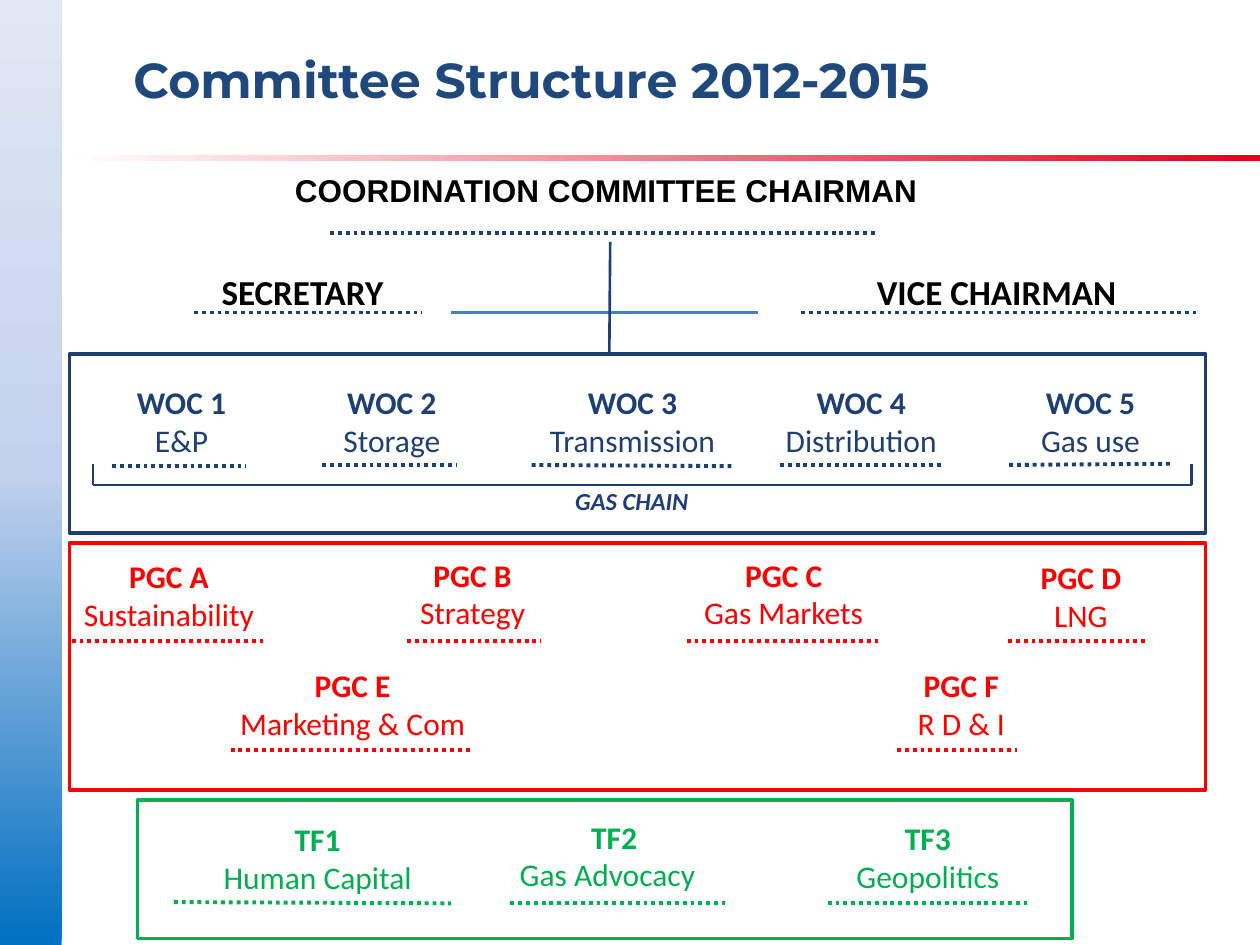
from copy import deepcopy

from pptx import Presentation
from pptx.dml.color import RGBColor
from pptx.enum.dml import MSO_LINE
from pptx.enum.shapes import MSO_CONNECTOR, MSO_SHAPE
from pptx.enum.text import MSO_ANCHOR, MSO_AUTO_SIZE, PP_ALIGN
from pptx.oxml.ns import qn
from pptx.util import Pt
from lxml import etree

DOTS = MSO_LINE.ROUND_DOT
STRAIGHT = MSO_CONNECTOR.STRAIGHT
RECT = MSO_SHAPE.RECTANGLE
MIDDLE, TOP = MSO_ANCHOR.MIDDLE, MSO_ANCHOR.TOP
GROW = MSO_AUTO_SIZE.SHAPE_TO_FIT_TEXT
CENTER, LEFT = PP_ALIGN.CENTER, PP_ALIGN.LEFT

NAVY, RED, GREEN, BLACK = "1E3F73", "FF0000", "00B050", "000000"
TITLE, BLUE = "1F497D", "4B7EBC"

# head, name, text left, top, width, dots from x, to x, from y, to y
WOCS = [
    ("WOC 1", "E&P", 61.2, 215.3, 85, 64.1, 140.4, 266.4, 266.4),
    ("WOC 2", "Storage", 181.4, 215.3, 85, 184.3, 260.6, 265.7, 265.7),
    ("WOC 3", "Transmission", 298.8, 215.3, 125.3, 303.8, 418.3, 265.7, 266.4),
    ("WOC 4", "Distribution", 434.9, 215.3, 114.5, 445.7, 538.6, 265.7, 265.7),
    ("WOC 5", "Gas use", 565.9, 215.3, 114.5, 576.7, 669.6, 265.7, 265),
]
PGCS = [
    ("PGC A", "Sustainability", 31, 314.6, 131, 41, 150.5, 366.5, 366.5),
    ("PGC B", "Strategy", 221.8, 313.9, 96.5, 232.6, 308.9, 366.5, 366.5),
    ("PGC C", "Gas Markets", 382.3, 313.9, 131, 392.4, 501.8, 366.5, 366.5),
    ("PGC D", "LNG", 552.2, 315.4, 131, 576, 655.2, 366.5, 366.5),
    ("PGC E", "Marketing & Com", 123.8, 377.3, 155.5, 131.8, 268.6, 428.4, 428.4),
    ("PGC F", "R D & I", 483.8, 377.3, 131, 512.6, 581, 428.4, 428.4),
]
FORCES = [
    ("TF1", "Human Capital", 99.4, 465.1, 164.2, 99.4, 257.8, 515.5, 516.2),
    ("TF2", "Gas Advocacy\t", 285.8, 463.7, 130.3, 291.6, 414, 516.2, 516.2),
    ("TF3", "Geopolitics", 462.2, 464.4, 136.1, 473, 586.8, 516.2, 516.2),
]


def color(code):
    return RGBColor.from_string(code)


def add_text(slide, box, lines, hue, size, face="Calibri", align=CENTER,
             anchor=TOP, grow=True):
    """Add a text box; each line is a text and a dict of font values."""
    frame = slide.shapes.add_textbox(*map(Pt, box)).text_frame
    frame.word_wrap = True
    frame.vertical_anchor = anchor
    if grow:
        frame.auto_size = GROW
    for i, (text, style) in enumerate(lines):
        para = frame.add_paragraph() if i else frame.paragraphs[0]
        para.alignment = align
        run = para.add_run()
        run.text = text
        run.font.color.rgb = color(hue)
        for key, value in {"name": face, "size": Pt(size), **style}.items():
            setattr(run.font, key, value)


def add_line(slide, ends, hue, width=1.5, dash=None):
    line = slide.shapes.add_connector(STRAIGHT, *map(Pt, ends))
    line.line.color.rgb = color(hue)
    line.line.width = Pt(width)
    if dash:
        line.line.dash_style = dash
    etree.SubElement(line._element.spPr, qn("a:effectLst"))


def add_dots(slide, ends, hue):
    add_line(slide, ends, hue, 2.25, DOTS)


def add_frame(slide, box, hue):
    shape = slide.shapes.add_shape(RECT, *map(Pt, box))
    shape.shadow.inherit = False
    shape.fill.background()
    shape.line.color.rgb = color(hue)
    shape.line.width = Pt(2)


def add_fade(slide, box, hues, angle):
    """Add a bar with evenly spaced gradient stops."""
    shape = slide.shapes.add_shape(RECT, *map(Pt, box))
    shape.shadow.inherit = False
    shape.line.fill.background()
    shape.fill.gradient()
    shape.fill.gradient_angle = angle
    stops = shape._element.spPr.find(".//" + qn("a:gsLst"))
    while len(stops) < len(hues):
        stops.append(deepcopy(stops[0]))
    for i, (stop, hue) in enumerate(zip(shape.fill.gradient_stops, hues)):
        stop.color.rgb = color(hue)
        stop.position = i / (len(hues) - 1)


def add_units(slide, units, hue):
    for head, name, left, top, width, x1, x2, y1, y2 in units:
        lines = [(head, {"bold": True}), (name, {"bold": False})]
        add_text(slide, (left, top, width, 51), lines, hue, 18)
        add_dots(slide, (x1, y1, x2, y2), hue)


def add_chairs(slide):
    bold = {"bold": True}
    add_text(slide, (157.7, 94.3, 382.3, 28.8),
             [("COORDINATION COMMITTEE CHAIRMAN ", bold)], BLACK, 18, "Arial")
    for text, left in (("VICE CHAIRMAN", 388.1), ("SECRETARY", -8.6)):
        add_text(slide, (left, 151.2, 362.9, 31.7), [(text, bold)], BLACK, 20)
    for x1, x2, y in ((188.6, 501.8, 133.2), (110.9, 241.2, 178.6),
                      (457.9, 683.3, 178.6)):
        add_dots(slide, (x1, y, x2, y), NAVY)
    add_line(slide, (433.4, 178.6, 257.8, 178.6), BLUE)
    add_line(slide, (348.7, 138.2, 348.2, 202.3), NAVY)


def add_chain(slide):
    add_text(slide, (186.5, 274.3, 349.2, 24.5),
             [("GAS CHAIN", {"bold": True, "italic": True})], NAVY, 14)
    left, right, top, base = 53.1, 681, 265, 277.2
    for ends in ((right, base, left, base), (right, top, right, base),
                 (left, top, left, base)):
        add_line(slide, ends, NAVY)


def main():
    deck = Presentation()
    deck.slide_width, deck.slide_height = Pt(720), Pt(540)
    slide = deck.slides.add_slide(deck.slide_layouts[6])

    add_fade(slide, (-2.9, 0, 38.2, 540), ("0070C0", "C2D1ED", "E1E8F5"), 90)
    add_fade(slide, (42.5, 88.6, 677.5, 3.6), ("E3001B", "FFFFFF"), 180)
    add_text(slide, (69.1, 0, 527, 90),
             [("Committee Structure 2012-2015", {"bold": True})],
             TITLE, 28, "Montserrat", LEFT, MIDDLE, False)
    add_chairs(slide)
    add_units(slide, WOCS, NAVY)
    add_chain(slide)
    add_units(slide, PGCS, RED)
    add_units(slide, FORCES, GREEN)
    add_frame(slide, (39.6, 202.3, 649.4, 102.2), NAVY)
    add_frame(slide, (39.6, 310.3, 649.4, 141.1), RED)
    add_frame(slide, (78.5, 457.2, 534.2, 79.2), GREEN)
    deck.save("out.pptx")


if __name__ == "__main__":
    main()
